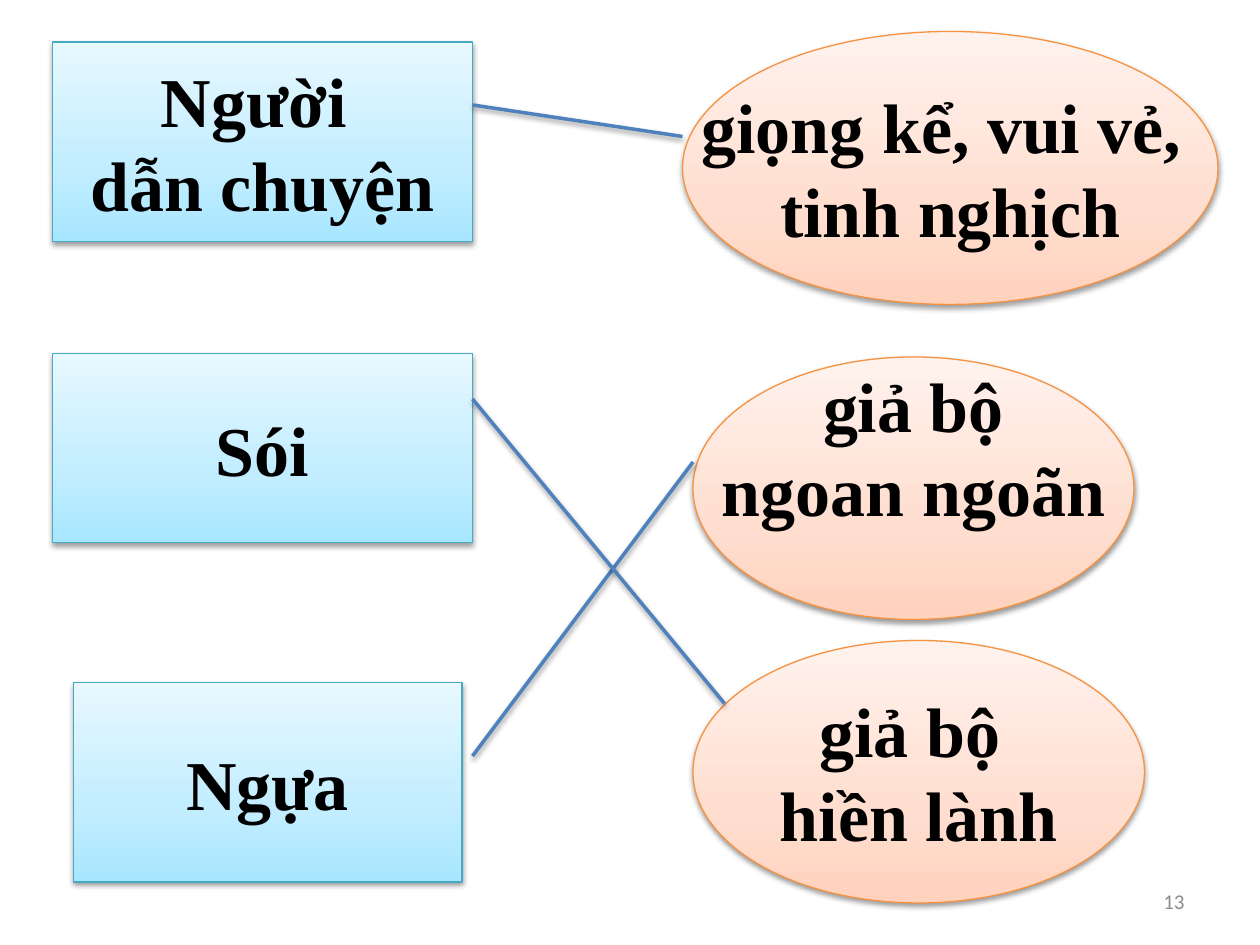
from copy import deepcopy
from lxml import etree
from pptx import Presentation
from pptx.dml.color import RGBColor
from pptx.enum.shapes import MSO_CONNECTOR, MSO_SHAPE
from pptx.enum.text import MSO_ANCHOR, PP_ALIGN
from pptx.util import Pt

RECT, OVAL = MSO_SHAPE.RECTANGLE, MSO_SHAPE.OVAL
LINE = MSO_CONNECTOR.STRAIGHT
MIDDLE = MSO_ANCHOR.MIDDLE
CENTER, RIGHT = PP_ALIGN.CENTER, PP_ALIGN.RIGHT
PX = 914400 // 120
SHADOW = (
    '<a:effectLst xmlns:a="http://schemas.openxmlformats.org/drawingml/2006/main">'
    '<a:outerShdw blurRad="40000" dist="20000" dir="5400000" rotWithShape="0">'
    '<a:srgbClr val="000000"><a:alpha val="38000"/></a:srgbClr>'
    '</a:outerShdw></a:effectLst>'
)


def color(code):
    return RGBColor.from_string(code)


def write(frame, text, align, font, size, code, bold):
    frame.text = text
    frame.vertical_anchor = MIDDLE
    for para in frame.paragraphs:
        para.alignment = align
        for run in para.runs:
            run.font.name = font
            run.font.size = Pt(size)
            run.font.bold = bold
            run.font.color.rgb = color(code)


prs = Presentation()
prs.slide_width, prs.slide_height = 1200 * PX, 900 * PX
slide = prs.slides.add_slide(prs.slide_layouts[6])
shapes = slide.shapes

num = shapes.add_textbox(860 * PX, 834 * PX, 280 * PX, 48 * PX)
num.text_frame.word_wrap = True
write(num.text_frame, "13", RIGHT, "Calibri", 12, "8C8C8C", False)

blue = ("46AAC5", ["A7E6FF", "C1EDFF", "E7F8FF"])
peach = ("F69240", ["FFD2BD", "FFDED0", "FFF2ED"])
cards = [
    (RECT, blue, 50, 40, 400, 190, "Người \ndẫn chuyện", 6),
    (RECT, blue, 50, 337, 400, 180, "Sói", 6),
    (RECT, blue, 70, 650, 370, 190, "Ngựa", 6),
    (OVAL, peach, 650, 30, 510, 260, "giọng kể, vui vẻ, \ntinh nghịch", 6),
    (OVAL, peach, 660, 340, 420, 250, "giả bộ\nngoan ngoãn", 86),
    (OVAL, peach, 660, 610, 430, 250, "giả bộ \nhiền lành", 6),
]
for kind, (edge, tones), x, y, w, h, text, base in cards:
    card = shapes.add_shape(kind, x * PX, y * PX, w * PX, h * PX)
    card.fill.gradient()
    card.fill.gradient_angle = 90
    first = card._element.spPr.xpath(".//a:gs")[0]
    first.addnext(deepcopy(first))
    for stop, tone, place in zip(card.fill.gradient_stops, tones, (0, 0.35, 1)):
        stop.color.rgb = color(tone)
        stop.position = place
    card.line.color.rgb = color(edge)
    card.line.width = Pt(0.75)
    card._element.spPr.append(etree.fromstring(SHADOW))
    card.text_frame.word_wrap = False
    card.text_frame.margin_bottom = base * PX
    write(card.text_frame, text, CENTER, "Times New Roman", 40, "000000", True)

links = [(450, 100, 650, 130), (450, 720, 660, 440), (450, 380, 690, 670)]
for ends in links:
    link = shapes.add_connector(LINE, *(end * PX for end in ends))
    link.line.color.rgb = color("4F81BD")
    link.line.width = Pt(2)
    link._element.spPr.append(etree.fromstring(SHADOW))

prs.save("out.pptx")
